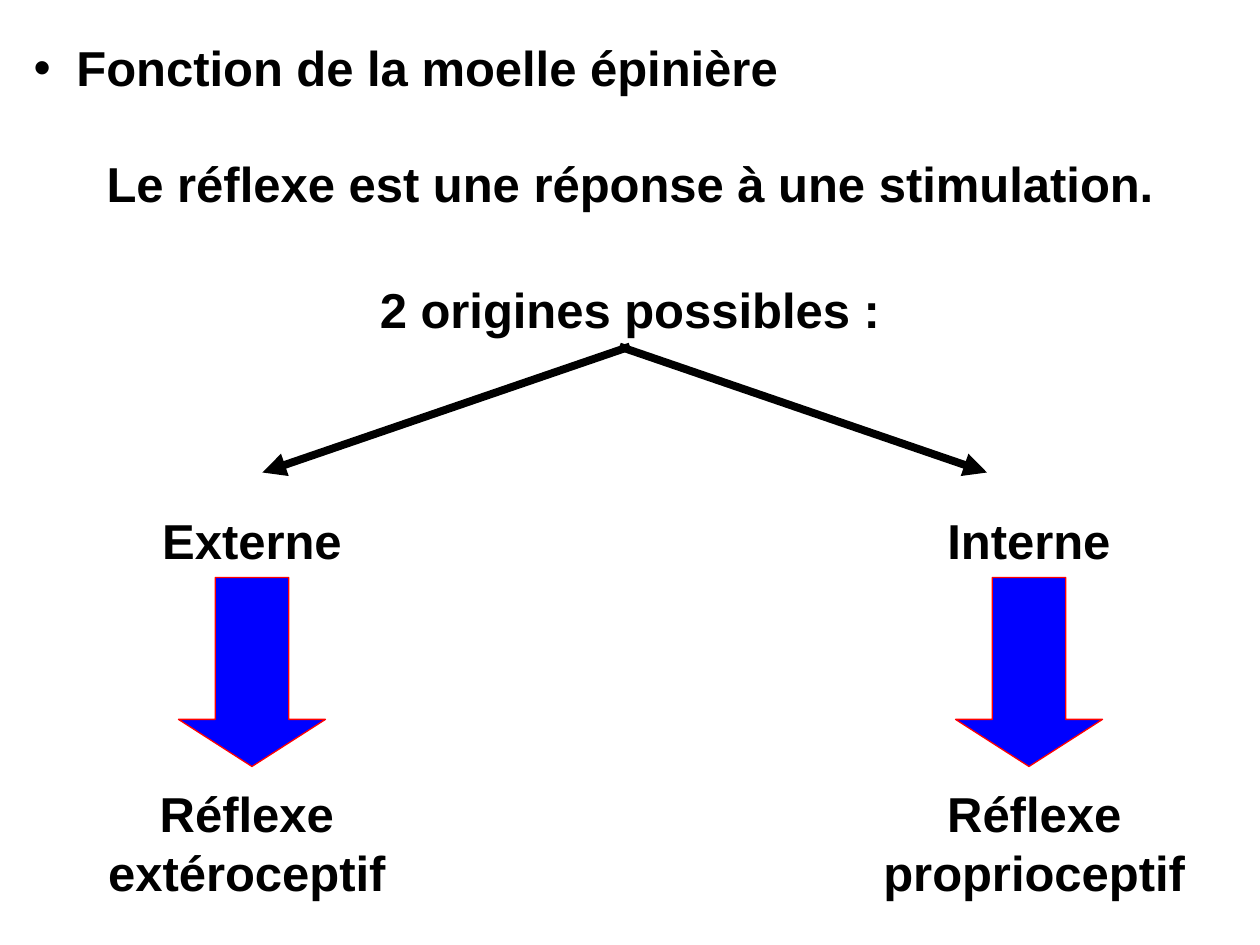
"""Build the slide on the two origins of a reflex."""
from dataclasses import dataclass
from typing import Any

from lxml.etree import SubElement
from pptx import Presentation
from pptx.dml.color import RGBColor as Color
from pptx.enum.shapes import MSO_CONNECTOR as Connector, MSO_SHAPE as Preset
from pptx.enum.text import MSO_ANCHOR as Anchor, MSO_AUTO_SIZE as AutoSize, PP_ALIGN as Align
from pptx.oxml.ns import qn
from pptx.util import Pt


@dataclass(frozen=True)
class Theme:
    font: str = "Arial"
    size: float = 28
    ink: Color = Color(0, 0, 0)
    arrow_fill: Color = Color(0, 0, 255)
    arrow_line: Color = Color(255, 0, 0)
    branch_width: float = 4.5
    outline_width: float = 0.75
    hanging: float = 24.5


@dataclass(frozen=True)
class Area:
    left: float
    top: float
    width: float
    height: float = 41

    def lengths(self) -> tuple:
        return tuple(Pt(value) for value in (self.left, self.top, self.width, self.height))


@dataclass(frozen=True)
class Origin:
    name: str
    name_area: Area
    arrow_left: float
    reflex: str
    reflex_area: Area


@dataclass(frozen=True)
class Branch:
    start: float
    end: float


THEME = Theme()
STATEMENTS = (
    ("Le réflexe est une réponse à une stimulation.", Area(0, 84, 720)),
    ("2 origines possibles :", Area(0, 156, 720)),
)
BRANCHES = (Branch(360, 150), Branch(354, 564))
ORIGINS = (
    Origin("Externe", Area(72, 288, 144), 102, "Réflexe extéroceptif", Area(42, 444, 198, 74)),
    Origin("Interne", Area(516, 288, 144), 546, "Réflexe proprioceptif", Area(480, 444, 222, 74)),
)


def apply(target: Any, values: dict[str, Any]) -> None:
    for name, value in values.items():
        setattr(target, name, value)


def write(box: Any, text: str, align: Align) -> Any:
    apply(box.text_frame, {
        "word_wrap": True, "auto_size": AutoSize.NONE, "vertical_anchor": Anchor.TOP,
        "margin_left": Pt(7.2), "margin_right": Pt(7.2),
        "margin_top": Pt(3.6), "margin_bottom": Pt(3.6),
    })
    para = box.text_frame.paragraphs[0]
    apply(para, {"alignment": align, "space_before": Pt(0)})
    span = para.add_run()
    span.text = text
    apply(span.font, {"name": THEME.font, "size": Pt(THEME.size), "bold": True})
    span.font.color.rgb = THEME.ink
    return para


def add_label(shapes: Any, text: str, area: Area) -> None:
    write(shapes.add_textbox(*area.lengths()), text, Align.CENTER)


def add_title(page: Any, text: str, area: Area) -> None:
    title = page.shapes.title
    apply(title, dict(zip(("left", "top", "width", "height"), area.lengths())))
    properties = write(title, text, Align.LEFT)._p.get_or_add_pPr()
    properties.set("marL", str(Pt(THEME.hanging)))
    properties.set("indent", str(-Pt(THEME.hanging)))
    SubElement(properties, qn("a:buFont"), typeface=THEME.font)
    SubElement(properties, qn("a:buChar"), char="•")


def add_branch(shapes: Any, branch: Branch) -> None:
    arrow = shapes.add_connector(
        Connector.STRAIGHT, Pt(branch.start), Pt(198), Pt(branch.end), Pt(270))
    arrow.line.width = Pt(THEME.branch_width)
    arrow.line.color.rgb = THEME.ink
    SubElement(arrow.line._get_or_add_ln(), qn("a:tailEnd"), type="triangle")
    SubElement(arrow._element.spPr, qn("a:effectLst"))


def add_down_arrow(shapes: Any, area: Area) -> None:
    arrow = shapes.add_shape(Preset.DOWN_ARROW, *area.lengths())
    arrow.adjustments[0], arrow.adjustments[1] = 0.5, 0.32
    arrow.shadow.inherit = False
    arrow.fill.solid()
    arrow.fill.fore_color.rgb = THEME.arrow_fill
    arrow.line.color.rgb = THEME.arrow_line
    arrow.line.width = Pt(THEME.outline_width)


def main() -> None:
    deck = Presentation()
    apply(deck, {"slide_width": Pt(720), "slide_height": Pt(540)})
    page = deck.slides.add_slide(deck.slide_layouts.get_by_name("Title Only"))
    add_title(page, "Fonction de la moelle épinière", Area(12, 18, 708))
    for text, area in STATEMENTS:
        add_label(page.shapes, text, area)
    fork = page.shapes.add_group_shape().shapes
    for branch in BRANCHES:
        add_branch(fork, branch)
    for origin in ORIGINS:
        add_label(page.shapes, origin.name, origin.name_area)
        outcome = page.shapes.add_group_shape().shapes
        add_down_arrow(outcome, Area(origin.arrow_left, 330, 84, 108))
        add_label(outcome, origin.reflex, origin.reflex_area)
    deck.save("out.pptx")


if __name__ == "__main__":
    main()
